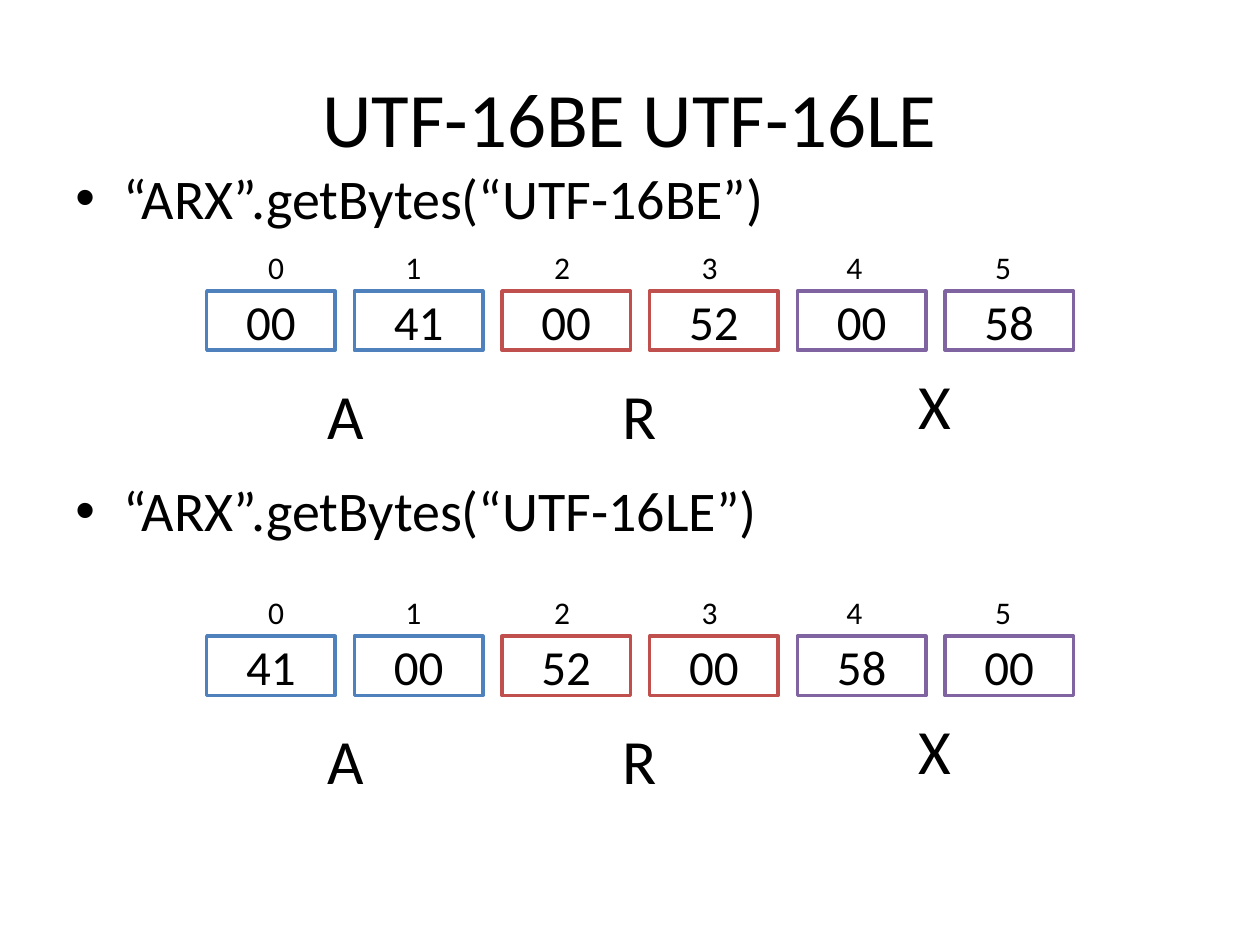
from lxml import etree
from pptx import Presentation
from pptx.dml.color import RGBColor
from pptx.enum.shapes import MSO_SHAPE
from pptx.enum.text import MSO_ANCHOR, MSO_AUTO_SIZE, PP_ALIGN
from pptx.oxml.ns import qn
from pptx.util import Inches, Pt

RECTANGLE = MSO_SHAPE.RECTANGLE
MIDDLE = MSO_ANCHOR.MIDDLE
FIT_SHAPE = MSO_AUTO_SIZE.SHAPE_TO_FIT_TEXT
LEFT, CENTER = PP_ALIGN.LEFT, PP_ALIGN.CENTER

BLACK = RGBColor(0x00, 0x00, 0x00)
WHITE = RGBColor(0xFF, 0xFF, 0xFF)
BLUE = RGBColor(0x4F, 0x81, 0xBD)
RED = RGBColor(0xC0, 0x50, 0x4D)
PURPLE = RGBColor(0x80, 0x64, 0xA2)
FONT = "Calibri"

TITLE_ONLY = 5
FIRST_CELL, LAST_CELL = 1.64, 7.5
INDEX_LEFTS = (2.03, 3.12, 4.3, 5.47, 6.62, 7.8)
LETTERS = (("A", 2.5, 0.63, BLUE), ("R", 4.84, 0.63, RED), ("X", 7.19, 0.55, PURPLE))


def write(para, text, size, align=LEFT, color=BLACK):
    para.alignment = align
    span = para.add_run()
    span.text = text
    span.font.name = FONT
    span.font.size = Pt(size)
    span.font.color.rgb = color


def set_title(page, text):
    title = page.shapes.title
    title.left, title.top = Inches(0.5), Inches(0.3)
    title.width, title.height = Inches(9), Inches(1.25)
    title.text_frame.vertical_anchor = MIDDLE
    write(title.text_frame.paragraphs[0], text, 44, align=CENTER)


def add_bullet_mark(para):
    properties = para._p.get_or_add_pPr()
    properties.set("marL", str(Inches(0.38)))
    properties.set("indent", str(Inches(-0.38)))
    etree.SubElement(properties, qn("a:buFont")).set("typeface", "Arial")
    etree.SubElement(properties, qn("a:buChar")).set("char", "•")


def add_bullets(page, lines, gap):
    box = page.shapes.add_textbox(Inches(0.5), Inches(1.25), Inches(9), Inches(3.28))
    frame = box.text_frame
    frame.word_wrap = True
    for number, line in enumerate(lines):
        para = frame.add_paragraph() if number else frame.paragraphs[0]
        para.space_before = Pt(gap if number else 0)
        write(para, line, 32)
        add_bullet_mark(para)


def add_label(page, text, left, top, width, height, size):
    box = page.shapes.add_textbox(Inches(left), Inches(top), Inches(width), Inches(height))
    box.text_frame.word_wrap = False
    box.text_frame.auto_size = FIT_SHAPE
    write(box.text_frame.paragraphs[0], text, size)


def add_cell(page, text, left, top, color):
    cell = page.shapes.add_shape(RECTANGLE, Inches(left), Inches(top), Inches(1.02), Inches(0.47))
    cell.shadow.inherit = False
    cell.fill.solid()
    cell.fill.fore_color.rgb = WHITE
    cell.line.color.rgb = color
    cell.line.width = Pt(2)
    cell.text_frame.vertical_anchor = MIDDLE
    write(cell.text_frame.paragraphs[0], text, 28, align=CENTER)


def add_byte_row(page, values, top):
    pitch = (LAST_CELL - FIRST_CELL) / (len(values) - 1)
    for index, value in enumerate(values):
        color = LETTERS[index // 2][-1]
        add_cell(page, value, FIRST_CELL + index * pitch, top, color)
        add_label(page, str(index), INDEX_LEFTS[index], top - 0.39, 0.33, 0.4, 18)
    for letter, left, drop, _ in LETTERS:
        add_label(page, letter, left, top + drop, 0.48, 0.71, 36)


def main():
    deck = Presentation()
    deck.slide_width, deck.slide_height = Inches(10), Inches(7.5)
    page = deck.slides.add_slide(deck.slide_layouts[TITLE_ONLY])
    set_title(page, "UTF-16BE UTF-16LE")
    add_bullets(page, ("“ARX”.getBytes(“UTF-16BE”)", "“ARX”.getBytes(“UTF-16LE”)"), gap=140)
    add_byte_row(page, ("00", "41", "00", "52", "00", "58"), 2.31)
    add_byte_row(page, ("41", "00", "52", "00", "58", "00"), 5.05)
    deck.save("out.pptx")


if __name__ == "__main__":
    main()
